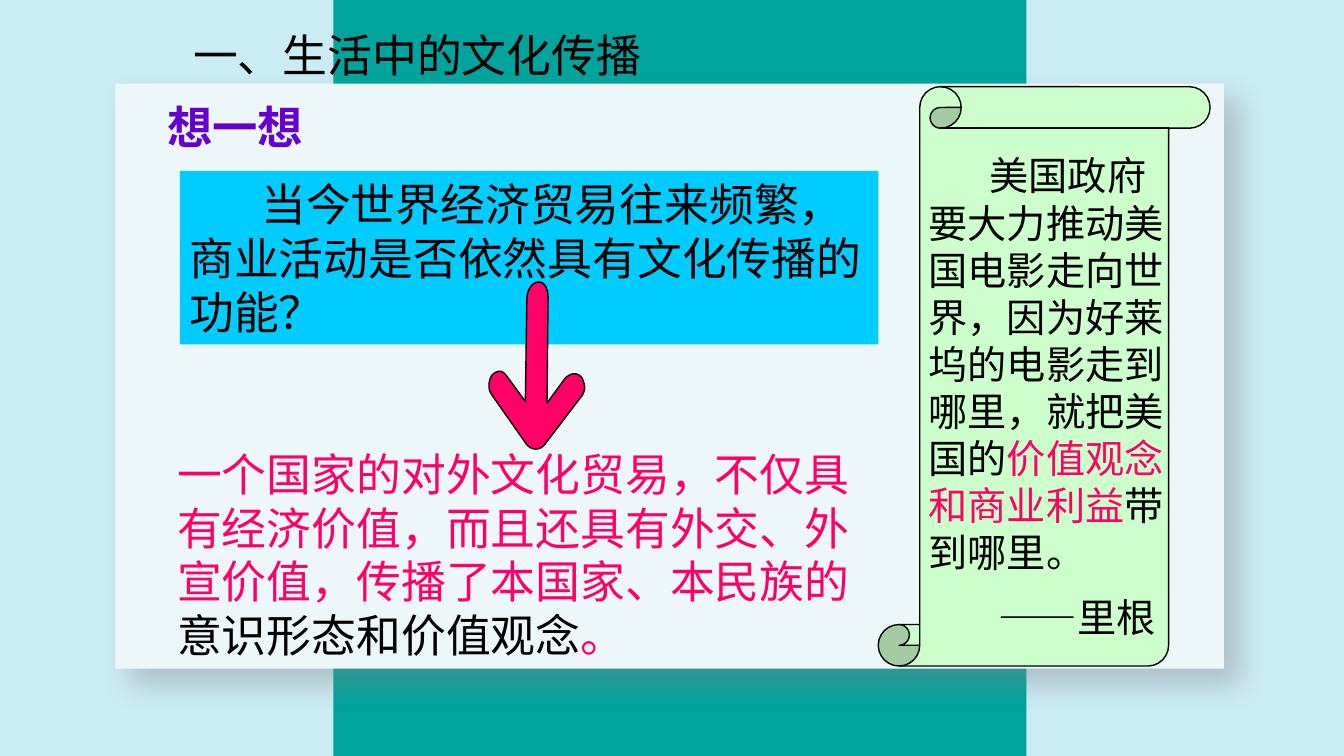
from lxml.etree import SubElement
from pptx import Presentation
from pptx.dml.color import RGBColor
from pptx.enum.shapes import MSO_SHAPE
from pptx.enum.text import MSO_ANCHOR, PP_ALIGN
from pptx.oxml import parse_xml
from pptx.oxml.ns import nsdecls, qn
from pptx.util import Cm, Pt

SKY = RGBColor(0xCB, 0xEB, 0xF5)
TEAL = RGBColor(0x00, 0xA4, 0x9C)
PANEL = RGBColor(0xED, 0xF6, 0xF9)
CYAN = RGBColor(0x00, 0xCC, 0xFF)
GREEN = RGBColor(0xCC, 0xFF, 0xCC)
PINK = RGBColor(0xFF, 0x00, 0x66)
PURPLE = RGBColor(0x66, 0x00, 0xCC)
BLACK = RGBColor(0, 0, 0)
SANS = "Noto Sans CJK SC"


def write(sp, paragraphs, size=24, font=SANS, east=SANS, bold=False, indent=0,
          left=0, before=0, align=PP_ALIGN.LEFT, anchor=MSO_ANCHOR.TOP,
          margins=(0.25, 0.13, 0.25, 0.13)):
    """Fill sp with paragraphs, each a list of (text, colour) runs.

    indent (cm) is for the first line of the first paragraph; left (cm) and
    before (pt) are for the paragraphs after it.
    """
    tf = sp.text_frame
    tf.word_wrap = True
    tf.vertical_anchor = anchor
    tf.margin_left, tf.margin_top, tf.margin_right, tf.margin_bottom = map(Cm, margins)
    for i, runs in enumerate(paragraphs):
        p = tf.add_paragraph() if i else tf.paragraphs[0]
        p.alignment = align
        p.line_spacing = Pt(size * 1.2)
        p.space_before = Pt(before if i else 0)
        pPr = p._p.get_or_add_pPr()
        pPr.set("marL", str(Cm(left if i else 0)))
        pPr.set("indent", str(Cm(0 if i else indent)))
        for text, color in runs:
            r = p.add_run()
            r.text = text
            r.font.size = Pt(size)
            r.font.bold = bold
            r.font.name = font
            r.font.color.rgb = color
            SubElement(r._r.get_or_add_rPr(), qn("a:ea")).set("typeface", east)


def paint(sp, fill, outlined=False):
    sp.shadow.inherit = False
    sp.fill.solid()
    sp.fill.fore_color.rgb = fill
    if outlined:
        sp.line.color.rgb = BLACK
        sp.line.width = Pt(0.75)
    else:
        sp.line.fill.background()


prs = Presentation()
prs.slide_width, prs.slide_height = Cm(25.4), Cm(14.29)
s = prs.slides.add_slide(prs.slide_layouts[5])
s.background.fill.solid()
s.background.fill.fore_color.rgb = SKY
shapes = s.shapes

# Backdrop
band = shapes.add_shape(MSO_SHAPE.RECTANGLE, Cm(6.3), 0, Cm(13.1), prs.slide_height)
paint(band, TEAL)
panel = shapes.add_shape(MSO_SHAPE.RECTANGLE, Cm(2.18), Cm(1.58), Cm(20.95), Cm(11.06))
paint(panel, PANEL)
panel._element.spPr.find(qn("a:effectLst")).append(parse_xml(
    f'<a:outerShdw {nsdecls("a")} blurRad="{Pt(15)}" dist="{Pt(12)}" dir="2700000" '
    'algn="tl" rotWithShape="0"><a:srgbClr val="808080"><a:alpha val="40000"/>'
    '</a:srgbClr></a:outerShdw>'))

# Question and answer
question = shapes.add_shape(MSO_SHAPE.RECTANGLE, Cm(3.4), Cm(3.23), Cm(13.2), Cm(3.28))
paint(question, CYAN)
write(question, [[("当今世界经济贸易往来频繁，商业活动是否依然具有文化传播的功能？", BLACK)]],
      font="Arial", indent=1.36, anchor=MSO_ANCHOR.MIDDLE,
      margins=(0.18, 0.1, 0.18, 0.1))

heading = shapes.add_textbox(Cm(2.74), Cm(1.75), Cm(3.4), Cm(1.35))
write(heading, [[("想一想", PURPLE)]], size=24.3, font="Noto Sans CJK JP",
      east="Noto Sans CJK JP", bold=True, align=PP_ALIGN.CENTER,
      margins=(0, 0.13, 0, 0.13))

answer = shapes.add_textbox(Cm(3.1), Cm(8.29), Cm(13.67), Cm(4.37))
write(answer, [[("一个国家的对外文化贸易，不仅具有经济价值，而且还具有外交、外宣价值，"
                 "传播了本国家、本民族的", PINK),
                ("意识形态和价值观念", BLACK), ("。", PINK)]],
      anchor=MSO_ANCHOR.MIDDLE)

# Quotation on a scroll
scroll = shapes.add_shape(MSO_SHAPE.VERTICAL_SCROLL, Cm(16.6), Cm(1.64), Cm(6.27), Cm(10.95))
scroll.adjustments[0] = 0.125
paint(scroll, GREEN, outlined=True)
quote = shapes.add_textbox(Cm(17.3), Cm(2.74), Cm(4.95), Cm(9.68))
write(quote, [[("美国政府要大力推动美国电影走向世界，因为好莱坞的电影走到哪里，就把美国的", BLACK),
               ("价值观念和商业利益", PINK), ("带到哪里。", BLACK)],
              [("——里根", BLACK)]],
      size=21, indent=1.15, left=1.33, before=10, margins=(0.25, 0.13, 0.1, 0.13))

title = shapes.title
title.left, title.top, title.width, title.height = Cm(3.4), Cm(0.39), Cm(10.49), Cm(1.27)
write(title, [[("一、生活中的文化传播", BLACK)]], font="Arial")
shapes._spTree.append(title._element)  # bring in front of the backdrop

# Rounded arrow in cm: a single point is a line end, three points are a Bezier curve
start = (11.05, 7.32)
steps = [
    [(11.05, 7.39), (11.02, 7.47), (10.97, 7.52)], [(10.29, 8.41)],
    [(10.24, 8.47), (10.18, 8.49), (10.13, 8.49)],
    [(10.05, 8.49), (10, 8.45), (9.96, 8.41)], [(9.3, 7.47)],
    [(9.22, 7.37), (9.22, 7.21), (9.3, 7.09)],
    [(9.4, 6.99), (9.5, 6.99), (9.58, 7.11)], [(9.93, 7.59)], [(9.96, 5.61)],
    [(9.98, 5.46), (10.06, 5.33), (10.19, 5.33)],
    [(10.29, 5.33), (10.36, 5.46), (10.36, 5.61)], [(10.34, 7.62)], [(10.69, 7.14)],
    [(10.8, 7.04), (10.92, 7.04), (11, 7.14)],
    [(11.02, 7.19), (11.05, 7.26), (11.05, 7.32)],
]
outline = [start]
for step in steps:
    if len(step) == 1:
        outline += step
        continue
    curve = [outline[-1], *step]
    for t in (0.2, 0.4, 0.6, 0.8, 1):
        weights = ((1 - t) ** 3, 3 * t * (1 - t) ** 2, 3 * t ** 2 * (1 - t), t ** 3)
        outline.append(tuple(sum(w * pt[axis] for w, pt in zip(weights, curve))
                             for axis in (0, 1)))
points = [(Cm(x), Cm(y)) for x, y in outline]
builder = shapes.build_freeform(*points[0])
builder.add_line_segments(points[1:], close=True)
paint(builder.convert_to_shape(), PINK, outlined=True)

prs.save("out.pptx")
